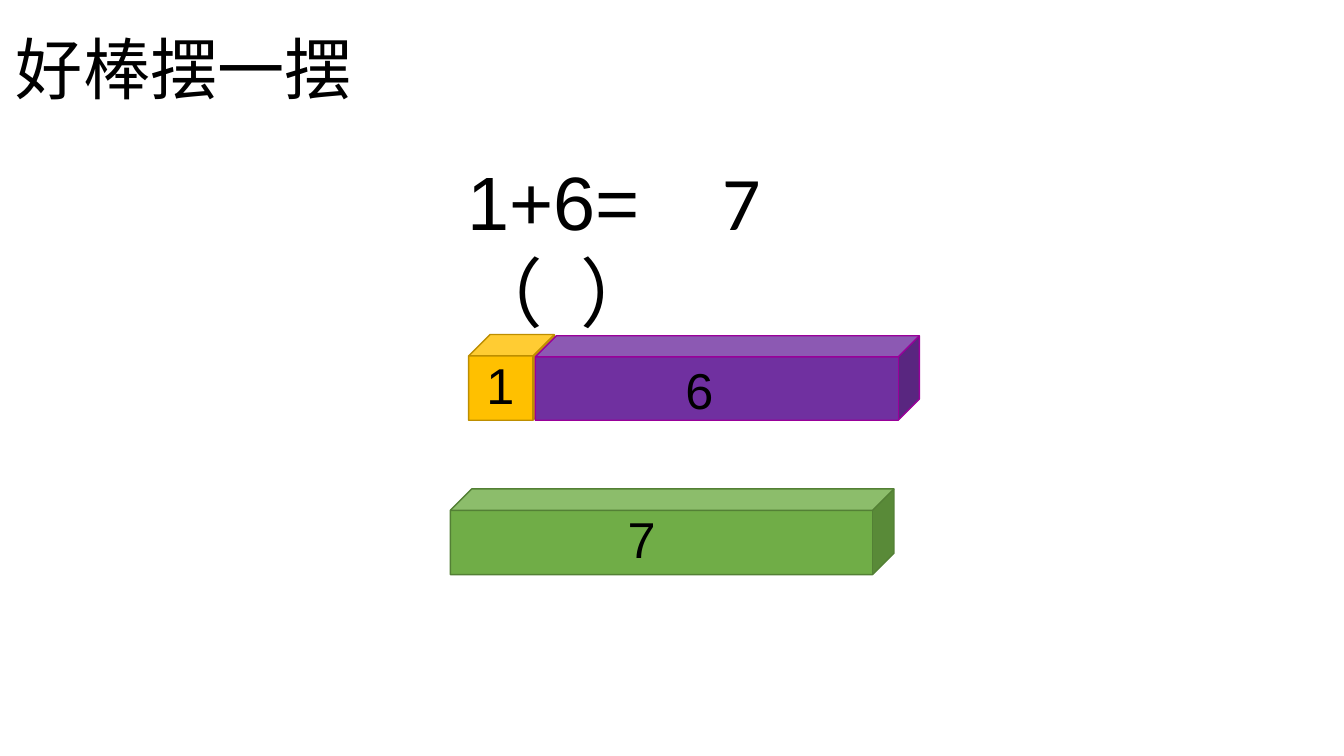
"""Builds a slide that adds 1 and 6 with number rods."""
from pptx import Presentation
from pptx import util as u
from pptx.dml import color
from pptx.enum import shapes, text
from pptx.oxml import ns, xmlchemy

CJK = "Noto Sans CJK JP"


def rgb(hex):
    """Turn a hex string into a colour."""
    return color.RGBColor.from_string(hex)


class Board:
    """Holds the style and the current slide."""

    ink = "000000"
    face = "Arial"

    def __init__(self, deck):
        """Add a blank slide to the deck."""
        self.slide = deck.slides.add_slide(deck.slide_layouts[6])

    def label(self, runs, box, size, face=face, home=None):
        """Add a text box whose runs are (words, letter gap) pairs."""
        home = home or self.slide.shapes
        frame = home.add_textbox(*map(u.Cm, box)).text_frame
        frame.word_wrap = True
        frame.auto_size = text.MSO_AUTO_SIZE.SHAPE_TO_FIT_TEXT
        line = frame.paragraphs[0]
        for words, gap in runs:
            run = line.add_run()
            run.text = words
            font = run.font
            font.size = u.Pt(size)
            font.name = face
            font.color.rgb = rgb(self.ink)
            props = run._r.get_or_add_rPr()
            east = xmlchemy.OxmlElement("a:ea")
            east.set("typeface", CJK)
            props.find(ns.qn("a:latin")).addnext(east)
            if gap:
                props.set("spc", str(gap * 100))

    def rod(self, num, box, spot, fill, edge):
        """Group a cube with its number."""
        home = self.slide.shapes.add_group_shape().shapes
        cube = home.add_shape(shapes.MSO_SHAPE.CUBE, *map(u.Cm, box))
        cube.shadow.inherit = False
        cube.fill.solid()
        cube.fill.fore_color.rgb = rgb(fill)
        cube.line.color.rgb = rgb(edge)
        cube.line.width = u.Pt(1)
        self.label([(num, 0)], spot, 36, home=home)


def main():
    """Build and save the slide."""
    deck = Presentation()
    deck.slide_width, deck.slide_height = u.Cm(33.87), u.Cm(19.05)
    board = Board(deck)
    board.label([("好棒摆一摆", 0)], (0.15, 0.56, 9.35, 2.31), 48, CJK)
    board.label([("1+6=（", 0), (" ", 15), ("）", 0)],
                (11.53, 3.78, 8.86, 2.57), 54)
    board.rod("1", (11.81, 8.43, 2.16, 2.16), (12.01, 8.79, 1.78, 1.8),
              "FFC000", "BD8E00")
    board.rod("7", (11.35, 12.32, 11.18, 2.16), (15.57, 12.67, 3.58, 1.8),
              "70AD47", "538035")
    board.label([("7", 0)], (17.96, 3.78, 2.62, 2.57), 54, "Calibri")
    board.rod("6", (13.49, 8.46, 9.68, 2.13), (17.02, 8.92, 2.67, 1.8),
              "7030A0", "990099")
    deck.save("out.pptx")


if __name__ == "__main__":
    main()
